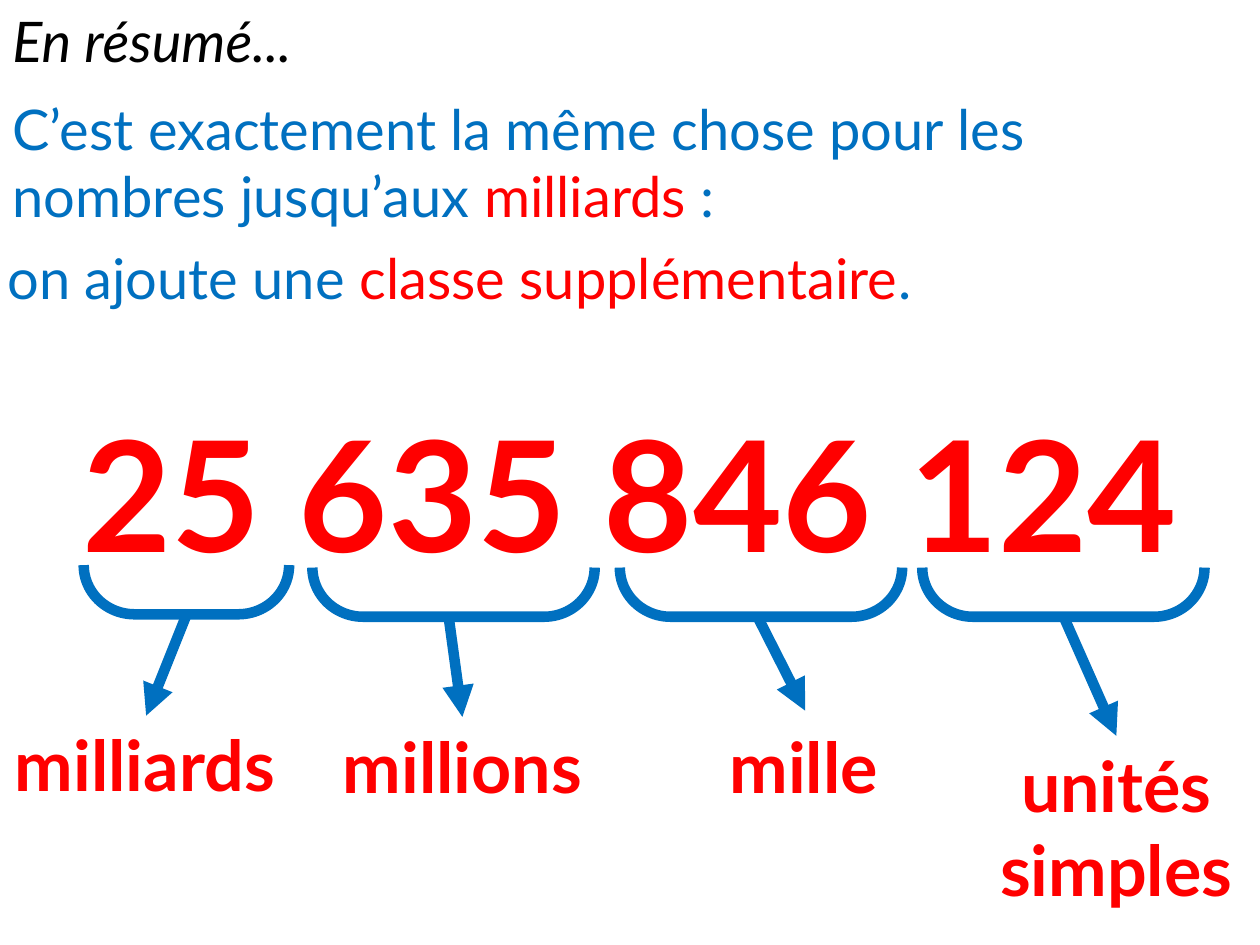
from lxml import etree
from pptx import Presentation
from pptx.dml.color import RGBColor
from pptx.enum.shapes import MSO_CONNECTOR, MSO_SHAPE
from pptx.enum.text import PP_ALIGN
from pptx.oxml.ns import qn
from pptx.util import Inches, Pt

LEFT, CENTER = PP_ALIGN.LEFT, PP_ALIGN.CENTER
BRACKET = MSO_SHAPE.LEFT_BRACKET
STRAIGHT = MSO_CONNECTOR.STRAIGHT
BLACK, BLUE, RED = "000000", "0070C0", "FF0000"
DEPTH = 0.39

deck = Presentation()
deck.slide_width, deck.slide_height = Inches(10), Inches(7.5)
slide = deck.slides.add_slide(deck.slide_layouts[6])


def add_text(box, runs, align=LEFT, **style):
    """Place one paragraph; runs are (words, colour) pairs sharing a font style."""
    frame = slide.shapes.add_textbox(*map(Inches, box)).text_frame
    frame.word_wrap = True
    para = frame.paragraphs[0]
    para.alignment = align
    for words, color in runs:
        run = para.add_run()
        run.text = words
        run.font.color.rgb = RGBColor.from_string(color)
        for key, value in {"name": "Lato", **style}.items():
            setattr(run.font, key, value)


def set_line(shape):
    shape.line.color.rgb = RGBColor.from_string(BLUE)
    shape.line.width = Pt(6)


intro = [
    ((0, 0, 9.13, 0.64), [("En résumé...", BLACK)], True),
    ((0, 0.7, 10, 1.18),
     [("C’est exactement la même chose pour les nombres jusqu’aux ", BLUE),
      ("milliards", RED), (" :", BLUE)], None),
    ((-0.04, 1.88, 10, 0.64),
     [("on ajoute une ", BLUE), ("classe supplémentaire", RED), (".", BLUE)], None),
]
for box, runs, slant in intro:
    add_text(box, runs, size=Pt(32), italic=slant)

add_text((0, 3.11, 10, 1.58), [("25 635 846 124", RED)], CENTER,
         size=Pt(88), bold=True)

# name, label box, bracket centre (x, y) and width, arrow start and end
classes = [
    ("milliards", (-0.04, 5.68, 2.38, 0.77), (1.48, 4.68), 1.63, (1.48, 4.88), (1.16, 5.68)),
    ("millions", (2.57, 5.69, 2.2, 0.77), (3.6, 4.7), 2.24, (3.56, 4.89), (3.67, 5.69)),
    ("mille", (5.28, 5.69, 2.2, 0.77), (6.04, 4.7), 2.24, (6.01, 4.89), (6.39, 5.64)),
    ("unités simples", (7.76, 5.84, 2.2, 1.45), (8.44, 4.7), 2.24, (8.44, 4.89), (8.86, 5.84)),
]
for name, box, (x, y), width, start, end in classes:
    # The bracket is drawn upright, then turned to open upwards
    brace = slide.shapes.add_shape(BRACKET, Inches(x - DEPTH / 2), Inches(y - width / 2),
                                   Inches(DEPTH), Inches(width))
    brace.rotation = 270
    brace.adjustments[0] = 1.03
    brace.shadow.inherit = False
    brace.fill.background()
    set_line(brace)

    arrow = slide.shapes.add_connector(STRAIGHT, *map(Inches, start + end))
    set_line(arrow)
    etree.SubElement(arrow.line._get_or_add_ln(), qn("a:tailEnd"), type="triangle")
    etree.SubElement(arrow._element.spPr, qn("a:effectLst"))

    add_text(box, [(name, RED)], CENTER, size=Pt(40), bold=True)

deck.save("out.pptx")
